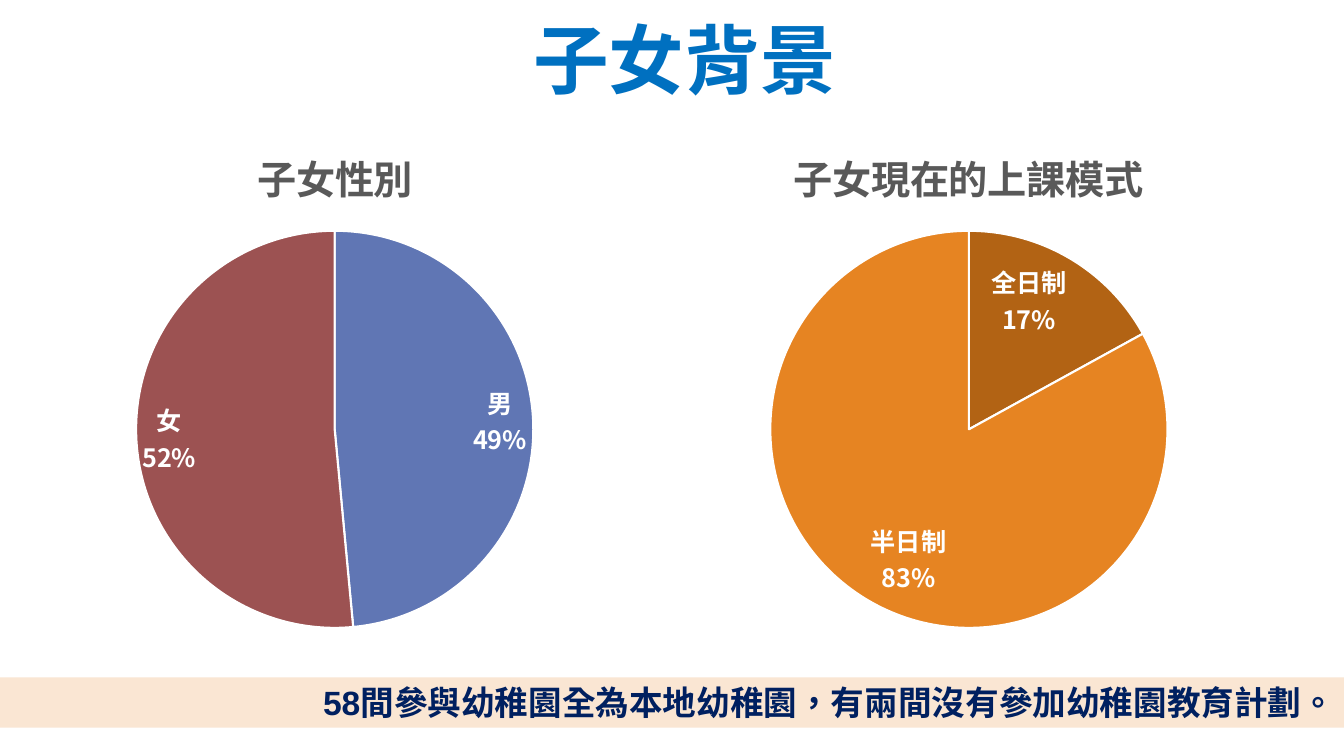
from dataclasses import dataclass
from lxml import etree
from pptx import Presentation
from pptx.chart.data import CategoryChartData
from pptx.dml.color import RGBColor
from pptx.enum.chart import XL_CHART_TYPE, XL_LABEL_POSITION
from pptx.enum.shapes import MSO_SHAPE
from pptx.enum.text import MSO_ANCHOR, PP_ALIGN
from pptx.oxml import parse_xml
from pptx.oxml.ns import nsdecls, qn
from pptx.util import Inches, Pt

PIE = XL_CHART_TYPE.PIE
INSIDE = XL_LABEL_POSITION.INSIDE_END
RECT = MSO_SHAPE.RECTANGLE
BOTTOM, MIDDLE = MSO_ANCHOR.BOTTOM, MSO_ANCHOR.MIDDLE
CENTER, RIGHT = PP_ALIGN.CENTER, PP_ALIGN.RIGHT


@dataclass(frozen=True)
class Theme:
    serif: str = "TeX Gyre Pagella"
    sans: str = "Arial"
    han: str = "Noto Sans CJK TC"
    white: str = "FFFFFF"
    blue: str = "0070C0"
    navy: str = "002060"
    peach: str = "FAE6D3"
    gray: str = "595959"
    head: int = 54
    lead: int = 58
    title: int = 28
    note: int = 24
    label: int = 18
    base: int = 10


T = Theme()
WIDE, HIGH = 13.33, 7.5

HEAD = ("子女背景", (4.82, 0.02, 3.94, 1.06))
NOTE = ("58間參與幼稚園全為本地幼稚園，有兩間沒有參加幼稚園教育計劃。",
        (-0.26, 6.72, 13.6, 0.5))
# title, frame, pie centre across, slices (name, percent, colour)
PIES = [
    ("子女性別", (-0.28, 1.2, 7.19, 5.16), 3.32,
     [("男", 49, "6076B4"), ("女", 52, "9C5252")]),
    ("子女現在的上課模式", (5.63, 1.19, 7.97, 5.18), 9.61,
     [("全日制", 17, "B26314"), ("半日制", 83, "E68422")]),
]
PIE_MID, PIE_RAD = 4.26, 1.97
TITLE_TOP, TITLE_PAD = 1.36, 0.06


def color(code):
    return RGBColor.from_string(code)


def style(font, name, size, code, bold=True):
    font.name, font.size, font.bold = name, Pt(size), bold
    font.color.rgb = color(code)


def add_box(slide, text, place, fill, align, anchor, look):
    box = slide.shapes.add_shape(RECT, *map(Inches, place))
    box.shadow.inherit = False
    box.line.fill.background()
    box.fill.solid()
    box.fill.fore_color.rgb = color(fill)
    frame = box.text_frame
    frame.word_wrap = True
    frame.vertical_anchor = anchor
    par = frame.paragraphs[0]
    par.text, par.alignment = text, align
    style(par.font, *look)
    par.runs[0]._r.get_or_add_rPr().set("lang", "zh-TW")
    return box


def set_place(part, index, frame, left, top, size=None):
    """Pin a chart part at a slide position, stored as shares of its frame."""
    for old in part.findall(qn("c:layout")):
        part.remove(old)
    x, y, w, h = frame
    items = [("xMode", "edge"), ("yMode", "edge"),
             ("x", round((left - x) / w, 4)), ("y", round((top - y) / h, 4))]
    if size:
        items = [("layoutTarget", "inner")] + items
        items += [("w", round(size / w, 4)), ("h", round(size / h, 4))]
    body = "".join(f'<c:{key} val="{val}"/>' for key, val in items)
    part.insert(index, parse_xml(
        f'<c:layout {nsdecls("c")}><c:manualLayout>{body}'
        '</c:manualLayout></c:layout>'))


def add_pie(slide, title, frame, mid, slices):
    data = CategoryChartData()
    data.categories = [name for name, _, _ in slices]
    data.add_series("Series 1", [share for _, share, _ in slices])
    chart = slide.shapes.add_chart(PIE, *map(Inches, frame), data).chart
    chart.has_legend = False
    chart.font.name, chart.font.size = T.serif, Pt(T.base)

    chart.has_title = True
    head = chart.chart_title
    par = head.text_frame.paragraphs[0]
    par.text = title
    style(par.font, T.serif, T.title, T.gray)
    left = mid - len(title) * T.title / 72 / 2 - TITLE_PAD
    set_place(head._element, 1, frame, left, TITLE_TOP)

    plot = chart.plots[0]
    plot.vary_by_categories = True
    area = plot._element.getparent()
    set_place(area, 0, frame, mid - PIE_RAD, PIE_MID - PIE_RAD, 2 * PIE_RAD)
    for i, (_, _, code) in enumerate(slices):
        form = plot.series[0].points[i].format
        form.fill.solid()
        form.fill.fore_color.rgb = color(code)
        form.line.color.rgb = color(T.white)
        form.line.width = Pt(1.5)

    plot.has_data_labels = True
    tags = plot.data_labels
    tags.show_value = tags.show_category_name = True
    tags.show_percentage = False
    tags.number_format, tags.number_format_is_linked = '0"%"', False
    tags.position = INSIDE
    style(tags.font, T.han, T.label, T.white)
    split = etree.Element(qn("c:separator"))
    split.text = "\n"
    tags._element.find(qn("c:showBubbleSize")).addnext(split)


def main():
    deck = Presentation()
    deck.slide_width, deck.slide_height = Inches(WIDE), Inches(HIGH)
    slide = deck.slides.add_slide(deck.slide_layouts[6])

    head = add_box(slide, *HEAD, T.white, CENTER, BOTTOM,
                   (T.serif, T.head, T.blue))
    head.text_frame.paragraphs[0].line_spacing = Pt(T.lead)
    tint = head._element.spPr.find(".//" + qn("a:srgbClr"))
    etree.SubElement(tint, qn("a:alpha"), val="50000")

    for pie in PIES:
        add_pie(slide, *pie)
    add_box(slide, *NOTE, T.peach, RIGHT, MIDDLE, (T.sans, T.note, T.navy))
    deck.save("out.pptx")


if __name__ == "__main__":
    main()
